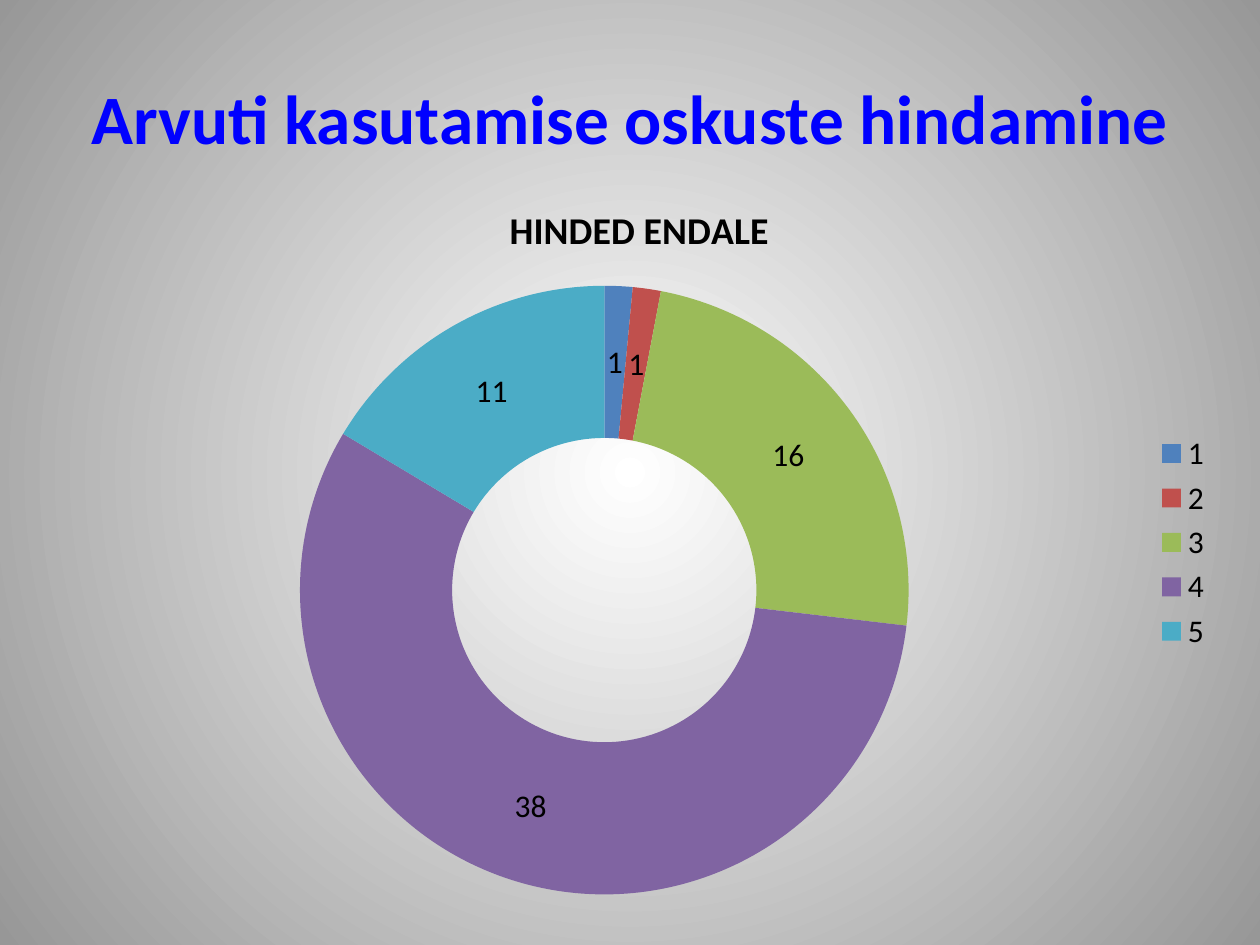
"""Build the slide on self-assessed computer skills with a doughnut chart."""
from dataclasses import dataclass

from lxml import etree
from pptx import Presentation
from pptx.chart.data import CategoryChartData
from pptx.dml.color import RGBColor
from pptx.enum.chart import XL_CHART_TYPE, XL_LEGEND_POSITION
from pptx.enum.text import MSO_ANCHOR, PP_ALIGN
from pptx.oxml import parse_xml
from pptx.oxml.ns import nsdecls, qn
from pptx.util import Inches, Pt

DOUGHNUT = XL_CHART_TYPE.DOUGHNUT
LEGEND_RIGHT = XL_LEGEND_POSITION.RIGHT
MIDDLE = MSO_ANCHOR.MIDDLE
CENTER = PP_ALIGN.CENTER
FONT = "Calibri"
HEADING = "Arvuti kasutamise oskuste hindamine"
CHART_HEADING = "HINDED ENDALE"


@dataclass
class Grade:
    name: str
    count: int
    color: str


GRADES = [
    Grade("1", 1, "4F81BD"),
    Grade("2", 1, "C0504D"),
    Grade("3", 16, "9BBB59"),
    Grade("4", 38, "8064A2"),
    Grade("5", 11, "4BACC6"),
]


def rgb(value: str) -> RGBColor:
    return RGBColor.from_string(value)


def style_font(font, size: float, color: str, bold: bool = False) -> None:
    font.name = FONT
    font.size = Pt(size)
    font.bold = bold
    font.color.rgb = rgb(color)


def paint_background(slide) -> None:
    fill = slide.background.fill
    fill.gradient()
    for stop, color in zip(fill.gradient_stops, ("FFFFFF", "979797")):
        stop.color.rgb = rgb(color)
    gradient = slide.element.find(".//" + qn("a:gradFill"))
    gradient.replace(gradient.find(qn("a:lin")), parse_xml(
        f'<a:path {nsdecls("a")} path="circle">'
        '<a:fillToRect l="50000" t="50000" r="50000" b="50000"/></a:path>'))


def write_heading(slide) -> None:
    heading = slide.shapes.title
    heading.left, heading.top = Inches(0.5), Inches(0.3)
    heading.width, heading.height = Inches(9), Inches(1.25)
    frame = heading.text_frame
    frame.text = HEADING
    frame.vertical_anchor = MIDDLE
    paragraph = frame.paragraphs[0]
    paragraph.alignment = CENTER
    style_font(paragraph.runs[0].font, 39.6, "0000FF", bold=True)


def place_ring(chart, x: float, y: float, w: float, h: float) -> None:
    plot_area = chart.element.find(".//" + qn("c:plotArea"))
    for old in plot_area.findall(qn("c:layout")):
        plot_area.remove(old)
    layout = etree.Element(qn("c:layout"))
    manual = etree.SubElement(layout, qn("c:manualLayout"))
    settings = {"layoutTarget": "inner", "xMode": "edge", "yMode": "edge",
                "x": x, "y": y, "w": w, "h": h}
    for tag, value in settings.items():
        etree.SubElement(manual, qn(f"c:{tag}")).set("val", str(value))
    plot_area.insert(0, layout)


def add_grades_chart(slide) -> None:
    data = CategoryChartData()
    data.categories = [grade.name for grade in GRADES]
    data.add_series(CHART_HEADING, [grade.count for grade in GRADES])
    chart = slide.shapes.add_chart(
        DOUGHNUT, Inches(0.43), Inches(1.39), Inches(9.29), Inches(5.83), data).chart
    style_font(chart.font, 18, "000000")

    chart.has_title = True
    chart.chart_title.include_in_layout = False
    chart_heading = chart.chart_title.text_frame
    chart_heading.text = CHART_HEADING
    style_font(chart_heading.paragraphs[0].runs[0].font, 21.6, "000000", bold=True)

    chart.has_legend = True
    chart.legend.position = LEGEND_RIGHT
    chart.legend.include_in_layout = False
    style_font(chart.legend.font, 18, "000000")

    ring = chart.plots[0]
    ring.vary_by_categories = True
    ring.has_data_labels = True
    ring.data_labels.show_value = True
    ring.data_labels.show_percentage = False
    style_font(ring.data_labels.font, 18, "000000")
    for index, grade in enumerate(GRADES):
        fill = ring.series[0].points[index].format.fill
        fill.solid()
        fill.fore_color.rgb = rgb(grade.color)
    chart.element.find(".//" + qn("c:holeSize")).set("val", "50")
    place_ring(chart, 0.21, 0.15, 0.52, 0.83)


def main() -> None:
    presentation = Presentation()
    presentation.slide_width = Inches(10)
    presentation.slide_height = Inches(7.5)
    slide = presentation.slides.add_slide(presentation.slide_layouts[5])
    paint_background(slide)
    write_heading(slide)
    add_grades_chart(slide)
    presentation.save("out.pptx")


if __name__ == "__main__":
    main()
